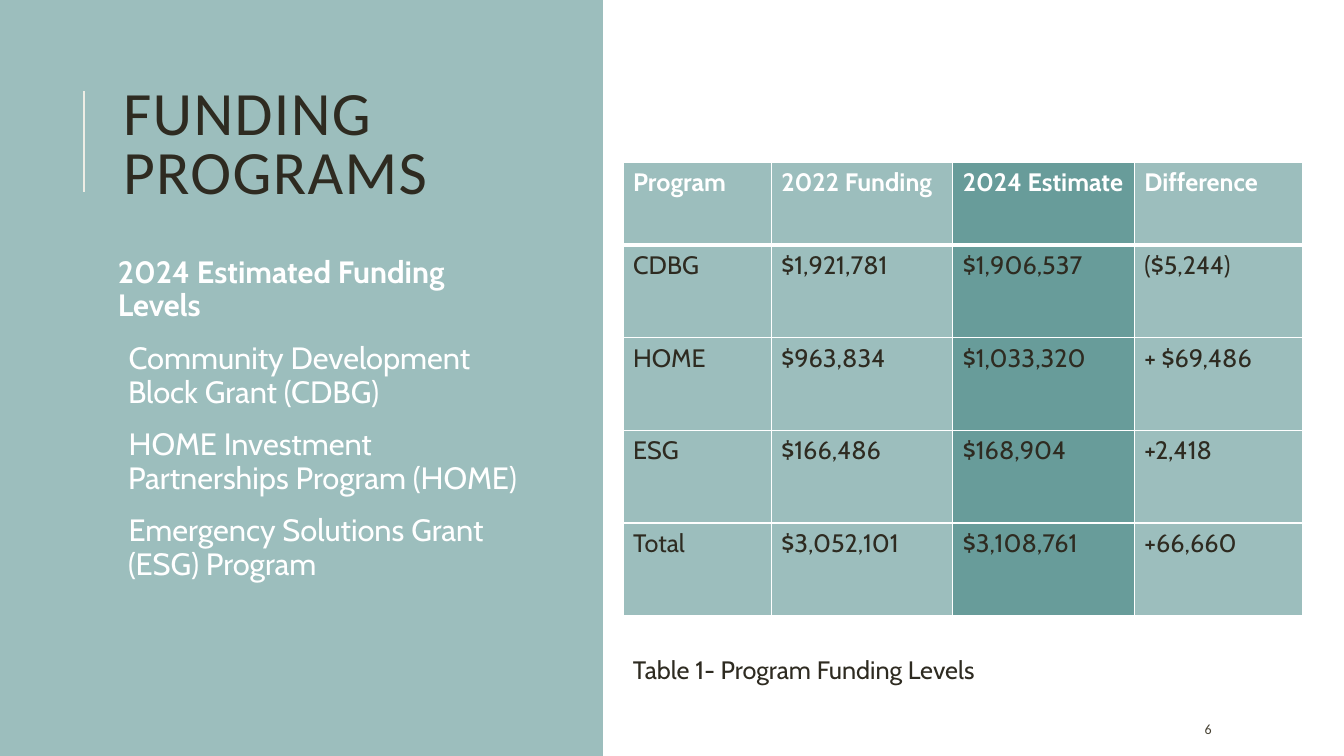
from lxml.etree import SubElement
from pptx import Presentation
from pptx.dml.color import RGBColor
from pptx.enum.shapes import MSO_CONNECTOR as Connector, MSO_SHAPE as Shape
from pptx.enum.text import MSO_ANCHOR as Anchor, MSO_AUTO_SIZE as AutoSize, PP_ALIGN as Align
from pptx.oxml.ns import qn
from pptx.util import Inches, Pt

COLORS = {
    "panel": "9CBEBD",
    "highlight": "689C9A",
    "dark": "2E2B21",
    "number": "474233",
    "rule": "EEEDE5",
    "white": "FFFFFF",
}

TITLE_FORMAT = {"name": "Calibri", "size": Pt(44), "bold": False}
BODY_FORMAT = {"name": "Cabin", "size": Pt(22)}
TABLE_FORMAT = {"name": "Cabin", "size": Pt(18)}
NUMBER_FORMAT = {"name": "Calibri", "size": Pt(10)}
TITLE_SPACING = {"line_spacing": 0.8, "alignment": Align.LEFT}
BODY_SPACING = {"line_spacing": 0.9, "space_before": Pt(12), "space_after": Pt(2)}

LIST_HEADING = "2024 Estimated Funding Levels"
PROGRAMS = [
    "Community Development Block Grant (CDBG)",
    "HOME Investment Partnerships Program (HOME)",
    "Emergency Solutions Grant (ESG) Program",
]

FUNDING = [
    ["Program", "2022 Funding", "2024 Estimate", "Difference"],
    ["CDBG", "$1,921,781", "$1,906,537", "($5,244)"],
    ["HOME", "$963,834", "$1,033,320", "+ $69,486"],
    ["ESG", "$166,486", "$168,904", "+2,418"],
    ["Total", "$3,052,101", "$3,108,761", "+66,660"],
]
COLUMN_WIDTHS = [1.47, 1.8, 1.8, 1.67]
ROW_HEIGHTS = [0.82] + [0.92] * 4
ESTIMATE_COLUMN = 2


def rgb(name):
    return RGBColor.from_string(COLORS[name])


def apply(target, values):
    for attribute, value in values.items():
        setattr(target, attribute, value)


def place(shape, left, top, width, height):
    apply(shape, {"left": Inches(left), "top": Inches(top),
                  "width": Inches(width), "height": Inches(height)})


def write(paragraph, text, font_format, color, **extra):
    run = paragraph.add_run()
    run.text = text
    apply(run.font, {**font_format, **extra})
    run.font.color.rgb = rgb(color)
    return run


def set_bullet(paragraph, indent, color=None):
    """Give the paragraph a coloured bullet, or none without a colour."""
    properties = paragraph._p.get_or_add_pPr()
    properties.set("marL", str(Inches(indent)))
    properties.set("indent", str(-Inches(indent)))
    if color is None:
        SubElement(properties, qn("a:buNone"))
        return
    bullet_color = SubElement(properties, qn("a:buClr"))
    SubElement(bullet_color, qn("a:srgbClr"), val=COLORS[color])
    SubElement(properties, qn("a:buChar"), char="•")


def add_panel(slide):
    panel = slide.shapes.add_shape(Shape.RECTANGLE, 0, 0, Inches(5.98), Inches(7.5))
    panel.shadow.inherit = False
    panel.fill.solid()
    panel.fill.fore_color.rgb = rgb("panel")
    panel.line.fill.background()
    slide.shapes._spTree.insert(2, panel._element)  # behind the placeholders


def add_title_rule(slide):
    rule = slide.shapes.add_connector(
        Connector.STRAIGHT, Inches(0.83), Inches(1.9), Inches(0.83), Inches(0.9))
    rule.line.color.rgb = rgb("rule")
    rule.line.width = Pt(1.5)
    SubElement(rule._element.spPr, qn("a:effectLst"))


def fill_title(title):
    place(title, 1.12, 0.64, 4.13, 1.64)
    apply(title.text_frame, {"vertical_anchor": Anchor.MIDDLE, "word_wrap": True,
                             "auto_size": AutoSize.NONE})
    paragraph = title.text_frame.paragraphs[0]
    apply(paragraph, TITLE_SPACING)
    run = write(paragraph, "FUNDING PROGRAMS", TITLE_FORMAT, "dark")
    run.font._element.set("spc", "100")


def fill_program_list(body):
    place(body, 1.12, 2.5, 4.15, 4.3)
    frame = body.text_frame
    margins = dict.fromkeys(
        ["margin_left", "margin_top", "margin_right", "margin_bottom"], Inches(0.05))
    apply(frame, {**margins, "word_wrap": True, "auto_size": AutoSize.NONE,
                  "vertical_anchor": Anchor.TOP})
    heading = frame.paragraphs[0]
    apply(heading, BODY_SPACING)
    set_bullet(heading, 0)
    write(heading, LIST_HEADING, BODY_FORMAT, "white", bold=True)
    for program in PROGRAMS:
        paragraph = frame.add_paragraph()
        apply(paragraph, BODY_SPACING)
        set_bullet(paragraph, 0.1, "panel")
        write(paragraph, program, BODY_FORMAT, "white")


def add_text(slide, box, text, font_format, color, anchor=Anchor.TOP):
    text_box = slide.shapes.add_textbox(*map(Inches, box))
    apply(text_box.text_frame, {"word_wrap": True, "vertical_anchor": anchor})
    write(text_box.text_frame.paragraphs[0], text, font_format, color)


def set_borders(cell, bottom_width):
    properties = cell._tc.get_or_add_tcPr()
    widths = {"a:lnL": 1, "a:lnR": 1, "a:lnT": 1, "a:lnB": bottom_width}
    for position, (tag, width) in enumerate(widths.items()):
        border = SubElement(properties, qn(tag), w=str(Pt(width)))
        fill = SubElement(border, qn("a:solidFill"))
        SubElement(fill, qn("a:srgbClr"), val=COLORS["white"])
        properties.insert(position, border)  # borders come before the fill


def add_funding_table(slide):
    frame = slide.shapes.add_table(
        len(FUNDING), len(COLUMN_WIDTHS), Inches(6.18), Inches(1.61),
        Inches(sum(COLUMN_WIDTHS)), Inches(sum(ROW_HEIGHTS)))
    table = frame.table
    table.horz_banding = False
    for column, width in zip(table.columns, COLUMN_WIDTHS):
        column.width = Inches(width)
    for row, height in zip(table.rows, ROW_HEIGHTS):
        row.height = Inches(height)
    for row_index, values in enumerate(FUNDING):
        header = row_index == 0
        for column_index, value in enumerate(values):
            cell = table.cell(row_index, column_index)
            cell.fill.solid()
            cell.fill.fore_color.rgb = rgb(
                "highlight" if column_index == ESTIMATE_COLUMN else "panel")
            # The heavy line under the header is shared by the first data row
            set_borders(cell, 3 if header else 1)
            if row_index == 1:
                cell._tc.tcPr.find(qn("a:lnT")).set("w", str(Pt(3)))
            write(cell.text_frame.paragraphs[0], value, TABLE_FORMAT,
                  "white" if header else "dark", bold=header)


def main():
    presentation = Presentation()
    presentation.slide_width = Inches(13.33)
    presentation.slide_height = Inches(7.5)
    slide = presentation.slides.add_slide(presentation.slide_layouts[1])

    # Left side: panel, title and program list
    add_panel(slide)
    fill_title(slide.shapes.title)
    add_title_rule(slide)
    fill_program_list(slide.placeholders[1])

    # Right side: funding table, caption and page number
    add_funding_table(slide)
    add_text(slide, (6.18, 6.44, 3.87, 0.4), "Table 1- Program Funding Levels",
             TABLE_FORMAT, "dark")
    add_text(slide, (11.85, 7.08, 1.06, 0.3), "6", NUMBER_FORMAT, "number", Anchor.MIDDLE)

    presentation.save("out.pptx")


if __name__ == "__main__":
    main()
